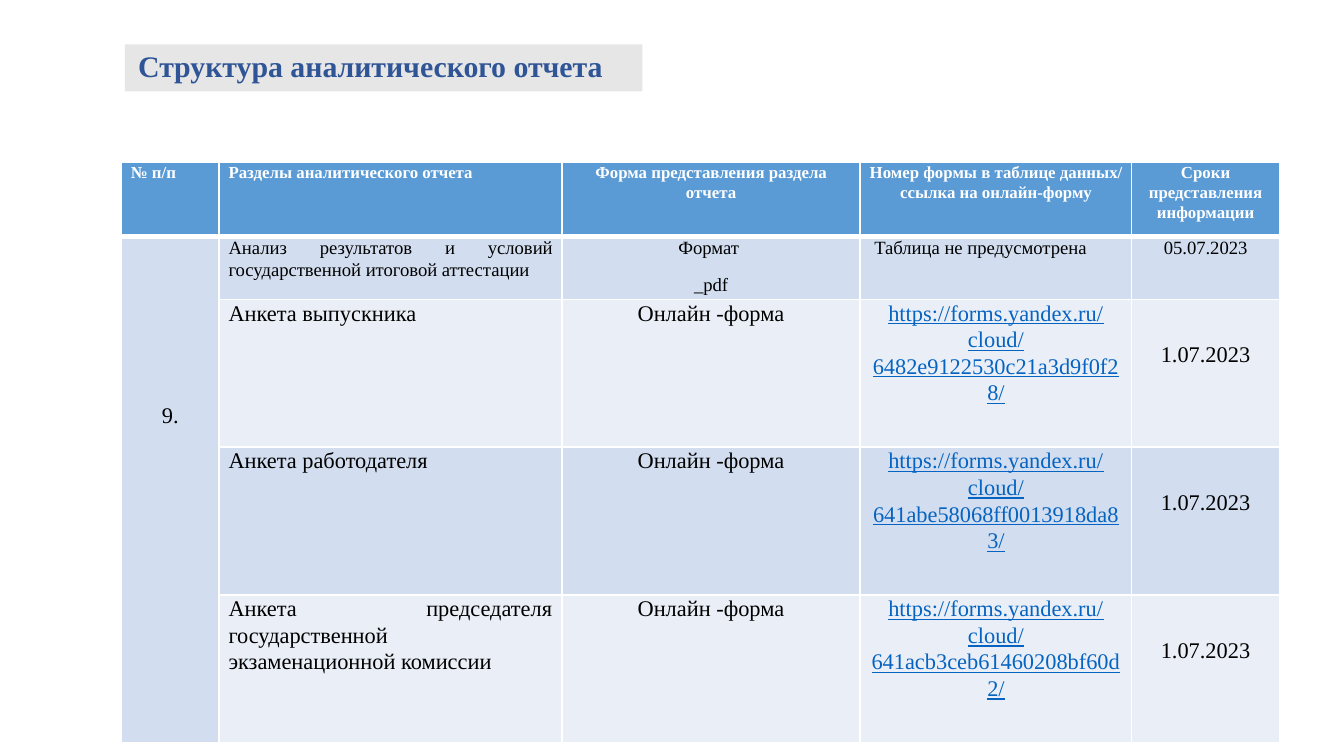
from lxml.etree import SubElement
from pptx import Presentation
from pptx.dml.color import RGBColor
from pptx.enum.text import MSO_ANCHOR as Anchor, PP_ALIGN as Align
from pptx.oxml.ns import qn
from pptx.util import Inches, Pt

COLUMNS, ROWS = 100, 56.25
WHITE, BLACK, LINK = "FFFFFF", "000000", "0563C1"
HEADER, BAND_DARK, BAND_LIGHT = "5B9BD5", "D2DEEF", "EAEFF7"


def color(code):
    """Turn a hex string into a colour."""
    return RGBColor.from_string(code)


def write(frame, text, size=12, ink=BLACK, bold=False, underline=False,
          align=Align.LEFT, spacing=1.07, after=8):
    """Fill a text frame, one paragraph for each line of the text."""
    frame.word_wrap = True
    for index, line in enumerate(text.split("\n")):
        para = frame.add_paragraph() if index else frame.paragraphs[0]
        para.alignment, para.line_spacing = align, spacing
        para.space_before, para.space_after = Pt(0), Pt(after)
        span = para.add_run()
        span.text = line
        font = span.font
        font.name, font.size, font.bold = "Times New Roman", Pt(size), bold
        font.underline = underline
        font.color.rgb = color(ink)


class Page:
    """Holds the grid and the current slide."""

    def __init__(self, deck):
        """Add a blank slide and measure its grid."""
        self.slide = deck.slides.add_slide(deck.slide_layouts[6])
        self.column = deck.slide_width / COLUMNS
        self.row = deck.slide_height / ROWS

    def across(self, count):
        """Give the width of some grid columns."""
        return round(count * self.column)

    def down(self, count):
        """Give the height of some grid rows."""
        return round(count * self.row)

    def place(self, left, top, width, height):
        """Turn a grid position into lengths."""
        return self.across(left), self.down(top), self.across(width), self.down(height)

    def title(self, text, *spot):
        """Add the filled title box."""
        box = self.slide.shapes.add_textbox(*self.place(*spot))
        box.fill.solid()
        box.fill.fore_color.rgb = color("E7E6E6")
        box.text_frame.vertical_anchor = Anchor.MIDDLE
        write(box.text_frame, text, size=16, ink="2F5597", bold=True, spacing=0.9, after=0)

    def table(self, left, top, widths, heights):
        """Add an empty table with the given column widths and row heights."""
        spot = self.place(left, top, sum(widths), sum(heights))
        table = self.slide.shapes.add_table(len(heights), len(widths), *spot).table
        for column, width in zip(table.columns, widths):
            column.width = self.across(width)
        for row, height in zip(table.rows, heights):
            row.height = self.down(height)
        return table

    def cell(self, cell, fill, text="", inset=0.7, drop=0, base=1, **style):
        """Format one cell: borders, fill, margins and text."""
        for side, points in zip("LRTB", (1, 1, 1, base)):
            line = SubElement(cell._tc.get_or_add_tcPr(), qn(f"a:ln{side}"), w=str(Pt(points)))
            SubElement(SubElement(line, qn("a:solidFill")), qn("a:srgbClr"), val=WHITE)
        cell.fill.solid()
        cell.fill.fore_color.rgb = color(fill)
        cell.margin_left, cell.margin_right = self.across(inset), self.across(0.7)
        cell.margin_top, cell.margin_bottom = self.down(drop), 0
        if text:
            write(cell.text_frame, text, **style)


def main():
    """Build the slide."""
    deck = Presentation()
    deck.slide_width = Inches(10)
    deck.slide_height = deck.slide_width * 9 // 16
    page = Page(deck)
    page.title("Структура аналитического отчета", 9.3, 3.3, 38.5, 3.5)
    table = page.table(9.04, 12.1, [7.27, 25.5, 22.2, 20.2, 11], [5.5, 4.4, 11, 11, 11])

    headings = [
        ("№ п/п", Align.LEFT),
        ("Разделы аналитического отчета", Align.JUSTIFY),
        ("Форма представления раздела отчета", Align.CENTER),
        ("Номер формы в таблице данных/ ссылка на онлайн-форму", Align.CENTER),
        ("Сроки представления информации", Align.CENTER),
    ]
    for index, (text, align) in enumerate(headings):
        page.cell(table.cell(0, index), HEADER, text, base=3,
                  size=9, ink=WHITE, bold=True, align=align)

    table.cell(1, 0).merge(table.cell(4, 0))
    page.cell(table.cell(1, 0), BAND_DARK, "9.", drop=12.3, align=Align.CENTER)

    analysis = [
        ("Анализ результатов и условий государственной итоговой аттестации", Align.JUSTIFY, 0.7),
        ("Формат \n_pdf", Align.CENTER, 0.7),
        ("Таблица не предусмотрена", Align.JUSTIFY, 1.05),
        ("05.07.2023", Align.CENTER, 0.7),
    ]
    for index, (text, align, inset) in enumerate(analysis, 1):
        page.cell(table.cell(1, index), BAND_DARK, text, inset, size=10, align=align)

    surveys = [
        ("Анкета выпускника", "6482e9122530c21a3d9f0f28"),
        ("Анкета работодателя", "641abe58068ff0013918da83"),
        ("Анкета председателя государственной экзаменационной комиссии",
         "641acb3ceb61460208bf60d2"),
    ]
    for row, (survey, code) in enumerate(surveys, 2):
        fill = BAND_DARK if row % 2 else BAND_LIGHT
        page.cell(table.cell(row, 0), BAND_DARK)
        page.cell(table.cell(row, 1), fill, survey, align=Align.JUSTIFY)
        page.cell(table.cell(row, 2), fill, "Онлайн -форма", align=Align.CENTER)
        page.cell(table.cell(row, 3), fill, f"https://forms.yandex.ru/cloud/{code}/",
                  ink=LINK, underline=True, align=Align.CENTER)
        page.cell(table.cell(row, 4), fill, "1.07.2023", drop=3.1, align=Align.CENTER)

    deck.save("out.pptx")


if __name__ == "__main__":
    main()
